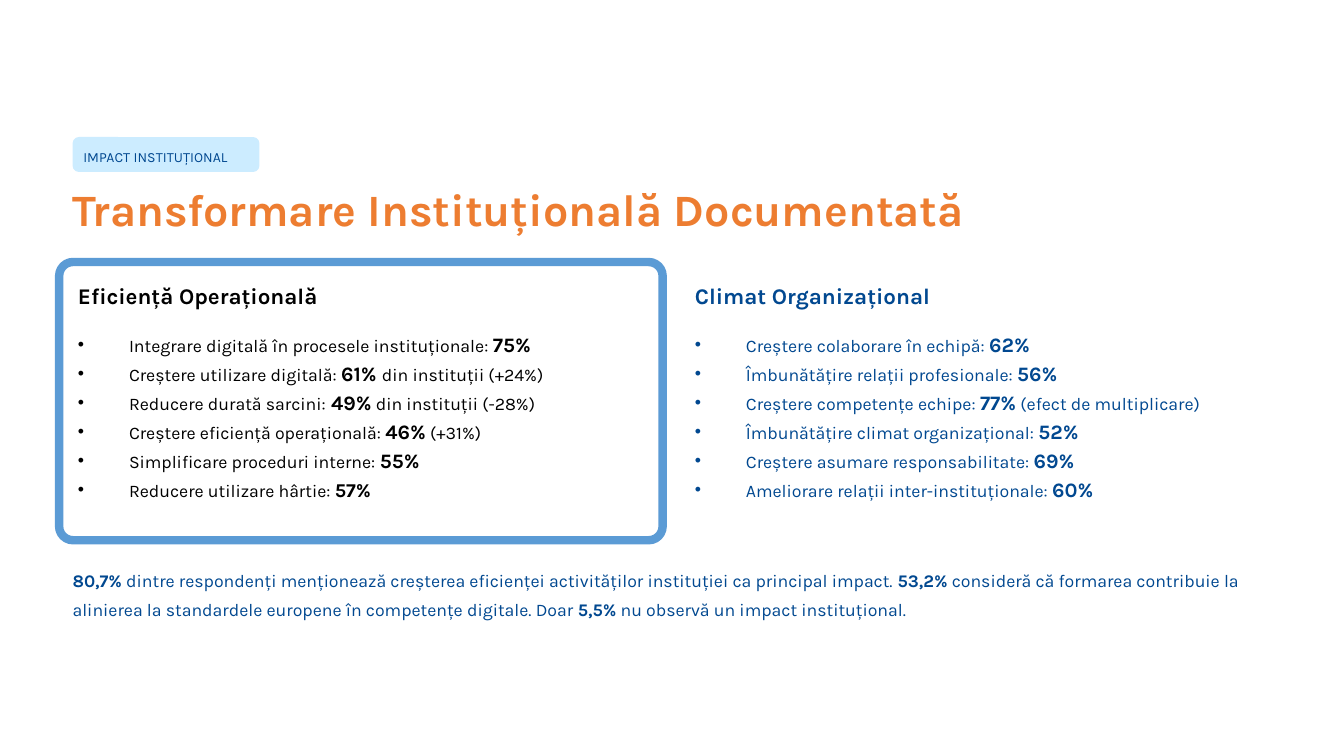
from dataclasses import dataclass
from typing import NamedTuple

from lxml.etree import SubElement
from pptx import Presentation
from pptx.dml.color import RGBColor
from pptx.enum.shapes import MSO_SHAPE as Shape
from pptx.enum.text import MSO_ANCHOR as Anchor, MSO_AUTO_SIZE as AutoSize, PP_ALIGN as Align
from pptx.oxml.ns import qn
from pptx.util import Inches, Pt

NAVY = RGBColor(0x01, 0x48, 0x90)
ORANGE = RGBColor(0xED, 0x7D, 0x31)
BLUE = RGBColor(0x5B, 0x9B, 0xD5)
PALE = RGBColor(0xCC, 0xEC, 0xFF)
BLACK = RGBColor(0, 0, 0)
FONT = "Karla"
BODY = 9.5
BODY_SPACING = 15.5
INDENT = 0.38
SLIDE_WIDTH = Inches(10)
SLIDE_HEIGHT = SLIDE_WIDTH * 9 // 16


class Box(NamedTuple):
    left: float
    top: float
    width: float
    height: float


class Run(NamedTuple):
    text: str
    size: float = BODY
    bold: bool = False


class Item(NamedTuple):
    label: str
    value: str
    tail: str = ""
    value_size: float = 11


@dataclass
class Column:
    left: float
    heading_width: float
    list_width: float
    color: RGBColor
    heading: str
    items: list[Item]


COLUMNS = [
    Column(0.58, 1.75, 4.22, BLACK, "Eficiență Operațională", [
        Item("Integrare digitală în procesele instituționale: ", "75%"),
        Item("Creștere utilizare digitală: ", "61% ", "din instituții (+24%)"),
        Item("Reducere durată sarcini:", " 49%", " din instituții (-28%)"),
        Item("Creștere eficiență operațională: ", "46%", " (+31%)"),
        Item("Simplificare proceduri interne: ", "55%"),
        Item("Reducere utilizare hârtie: ", "57%", value_size=10.5),
    ]),
    Column(5.17, 1.72, 4.29, NAVY, "Climat Organizațional", [
        Item("Creștere colaborare în echipă: ", "62%"),
        Item("Îmbunătățire relații profesionale: ", "56%"),
        Item("Creștere competențe echipe: ", "77%", " (efect de multiplicare)"),
        Item("Îmbunătățire climat organizațional: ", "52%"),
        Item("Creștere asumare responsabilitate: ", "69%"),
        Item("Ameliorare relații inter-instituționale: ", "60%"),
    ]),
]

SUMMARY = [
    Run("80,7%", bold=True),
    Run(" dintre respondenți menționează creșterea eficienței activităților "
        "instituției ca principal impact. "),
    Run("53,2%", bold=True),
    Run(" consideră că formarea contribuie la alinierea la standardele "
        "europene în competențe digitale. Doar "),
    Run("5,5%", bold=True),
    Run(" nu observă un impact instituțional."),
]


def set_all(target, values: dict) -> None:
    for name, value in values.items():
        setattr(target, name, value)


def item_runs(item: Item) -> list[Run]:
    runs = [Run(item.label), Run(item.value, item.value_size, True), Run(item.tail)]
    return [run for run in runs if run.text]


def add_bullet(p) -> None:
    pPr = p._p.get_or_add_pPr()
    pPr.set("marL", str(Inches(INDENT)))
    pPr.set("indent", str(-Inches(INDENT)))
    SubElement(pPr, qn("a:buFont")).set("typeface", "Arial")
    SubElement(pPr, qn("a:buChar")).set("char", "•")


def write_text(sp, box: Box, paragraphs: list[list[Run]], color: RGBColor,
               spacing: float, wrap: bool = False, bullets: bool = False) -> None:
    set_all(sp, {name: Inches(value) for name, value in box._asdict().items()})
    tf = sp.text_frame
    set_all(tf, {"margin_left": 0, "margin_top": 0, "margin_right": 0,
                 "margin_bottom": 0, "word_wrap": wrap,
                 "auto_size": AutoSize.NONE, "vertical_anchor": Anchor.TOP})
    for i, runs in enumerate(paragraphs):
        p = tf.add_paragraph() if i else tf.paragraphs[0]
        if bullets:
            add_bullet(p)
        set_all(p, {"alignment": Align.LEFT, "line_spacing": Pt(spacing),
                    "space_before": Pt(0)})
        for run in runs:
            r = p.add_run()
            r.text = run.text
            set_all(r.font, {"name": FONT, "size": Pt(run.size), "bold": run.bold})
            r.font.color.rgb = color


def add_text(s, box: Box, *args, **options) -> None:
    sp = s.shapes.add_textbox(*map(Inches, box))
    write_text(sp, box, *args, **options)


def add_rounded(s, box: Box, radius: float):
    sp = s.shapes.add_shape(Shape.ROUNDED_RECTANGLE, *map(Inches, box))
    sp.shadow.inherit = False
    sp.adjustments[0] = radius
    return sp


def add_column(s, column: Column) -> None:
    add_text(s, Box(column.left, 2.09, column.heading_width, 0.21),
             [[Run(column.heading, 12, True)]], column.color, 15)
    add_text(s, Box(column.left, 2.44, column.list_width, 1.54),
             [item_runs(item) for item in column.items], column.color,
             BODY_SPACING, wrap=True, bullets=True)


def main() -> None:
    prs = Presentation()
    set_all(prs, {"slide_width": SLIDE_WIDTH, "slide_height": SLIDE_HEIGHT})
    s = prs.slides.add_slide(prs.slide_layouts[5])

    tag = add_rounded(s, Box(0.54, 1.02, 1.39, 0.26), 0.18)
    tag.fill.solid()
    tag.fill.fore_color.rgb = PALE
    tag.line.fill.background()
    add_text(s, Box(0.62, 1.06, 1.23, 0.17),
             [[Run("IMPACT INSTITUȚIONAL", 7.5)]], NAVY, 12.5)

    write_text(s.shapes.title, Box(0.54, 1.33, 6.7, 0.42),
               [[Run("Transformare Instituțională Documentată", 24, True)]],
               ORANGE, 30.5)

    frame = add_rounded(s, Box(0.44, 1.95, 4.49, 2.07), 0.05)
    frame.fill.background()
    frame.line.color.rgb = BLUE
    frame.line.width = Pt(4.5)

    for column in COLUMNS:
        add_column(s, column)
    add_text(s, Box(0.54, 4.18, 8.91, 0.43), [SUMMARY], NAVY, BODY_SPACING, wrap=True)
    prs.save("out.pptx")


if __name__ == "__main__":
    main()
